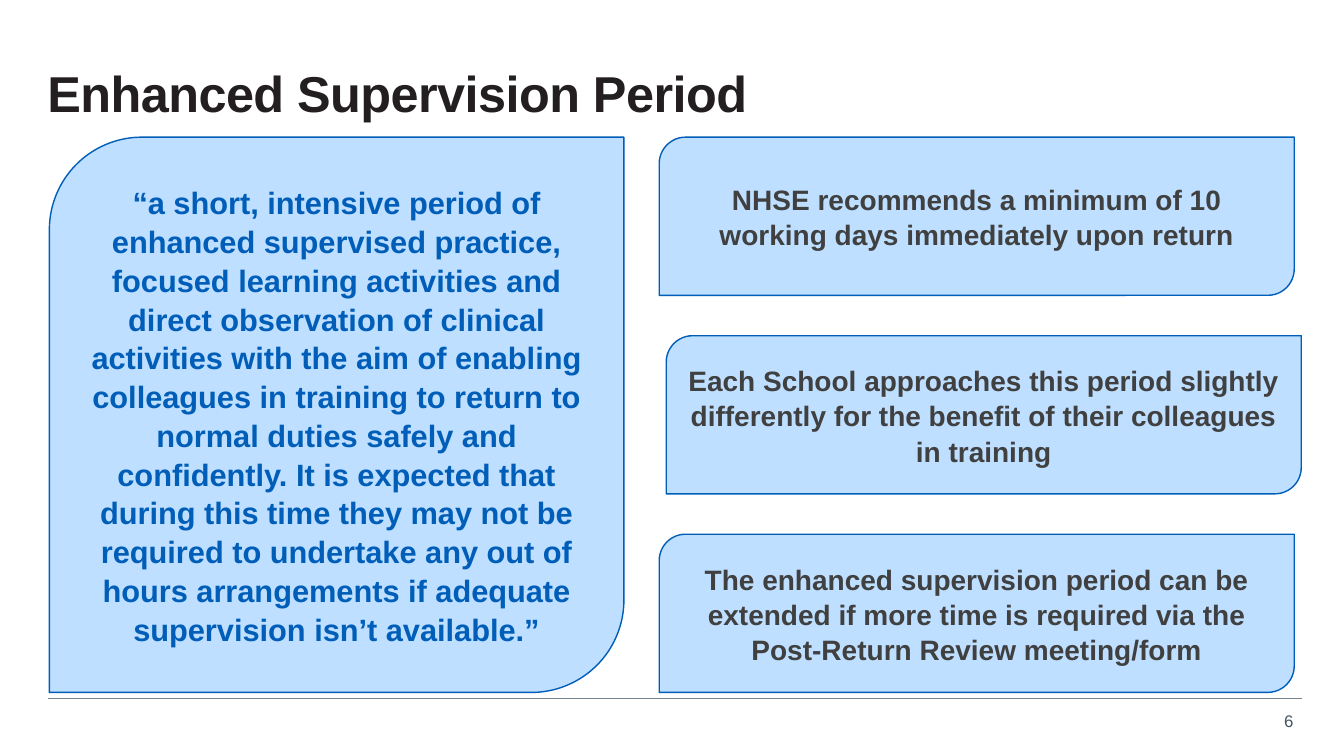
from pptx import Presentation
from pptx.dml.color import RGBColor
from pptx.enum.shapes import MSO_CONNECTOR, MSO_SHAPE
from pptx.enum.text import MSO_ANCHOR, MSO_AUTO_SIZE, PP_ALIGN
from pptx.oxml.ns import qn
from pptx.util import Pt
from lxml.etree import SubElement

INK = RGBColor(0x23, 0x1F, 0x20)
BLUE = RGBColor(0x00, 0x5E, 0xB8)
PALE = RGBColor(0xBE, 0xDF, 0xFF)
DARK = RGBColor(0x40, 0x40, 0x40)
SLATE = RGBColor(0x42, 0x55, 0x63)
GREY = RGBColor(0x76, 0x86, 0x92)

QUOTE = (
    "“a short, intensive period of enhanced supervised practice, focused "
    "learning activities and direct observation of clinical activities with "
    "the aim of enabling colleagues in training to return to normal duties "
    "safely and confidently. It is expected that during this time they may "
    "not be required to undertake any out of hours arrangements if adequate "
    "supervision isn’t available.”"
)
POINTS = [
    ("NHSE recommends a minimum of 10 working days immediately upon return", 0),
    ("Each School approaches this period slightly differently for the benefit "
     "of their colleagues in training", 5),
    ("The enhanced supervision period can be extended if more time is required "
     "via the Post-Return Review meeting/form", 0),
]


def apply(obj, props):
    for key, val in props.items():
        setattr(obj, key, val)


def write(shape, text, font, para, frame):
    apply(shape.text_frame, {"word_wrap": True, **frame})
    line = shape.text_frame.paragraphs[0]
    apply(line, para)
    run = line.add_run()
    run.text = text
    color = font["color"]
    apply(run.font, {"name": "Arial", "size": Pt(font["size"]), "bold": font["bold"]})
    run.font.color.rgb = color
    return run


def add_title(slide, box, text):
    title = slide.shapes.title
    apply(title, dict(zip(("left", "top", "width", "height"), map(Pt, box))))
    run = write(title, text, {"size": 36, "bold": True, "color": INK},
                {"alignment": PP_ALIGN.LEFT, "line_spacing": 0.9},
                {"vertical_anchor": MSO_ANCHOR.TOP, "auto_size": MSO_AUTO_SIZE.NONE})
    run.font._element.set("spc", "-40")


def add_card(slide, box, text, size, color):
    card = slide.shapes.add_shape(MSO_SHAPE.ROUND_2_DIAG_RECTANGLE, *map(Pt, box))
    card.shadow.inherit = False
    card.fill.solid()
    card.fill.fore_color.rgb = PALE
    card.line.color.rgb = BLUE
    card.line.width = Pt(1)
    write(card, text, {"size": size, "bold": True, "color": color},
          {"alignment": PP_ALIGN.CENTER, "line_spacing": 1.05},
          {"vertical_anchor": MSO_ANCHOR.MIDDLE})


def add_points(slide, box, gap):
    left, top, width, height = box
    tall = (height - gap * (len(POINTS) - 1)) / len(POINTS)
    for i, (text, shift) in enumerate(POINTS):
        add_card(slide, (left + shift, top + i * (tall + gap), width, tall),
                 text, 20, DARK)


def add_foot(slide, box, number):
    left, top, width, height = box
    rule = slide.shapes.add_connector(
        MSO_CONNECTOR.STRAIGHT, Pt(left), Pt(top), Pt(left + width), Pt(top))
    rule.line.color.rgb = GREY
    rule.line.width = Pt(0.5)
    SubElement(rule._element.spPr, qn("a:effectLst"))
    page = slide.shapes.add_textbox(
        Pt(left + width - 29), Pt(top + 5), Pt(30), Pt(height - 5))
    write(page, number, {"size": 12, "bold": False, "color": SLATE},
          {"alignment": PP_ALIGN.RIGHT}, {})


def main():
    deck = Presentation()
    apply(deck, {"slide_width": Pt(960), "slide_height": Pt(540)})
    slide = deck.slides.add_slide(deck.slide_layouts[5])
    add_foot(slide, (34, 499, 896, 27), "6")
    add_title(slide, (26.6, 45.4, 898, 68.4), "Enhanced Supervision Period")
    add_card(slide, (35.3, 98, 410.4, 396.6), QUOTE, 22, BLUE)
    add_points(slide, (470.9, 98, 453.6, 396.6), 28.8)
    deck.save("out.pptx")


if __name__ == "__main__":
    main()
